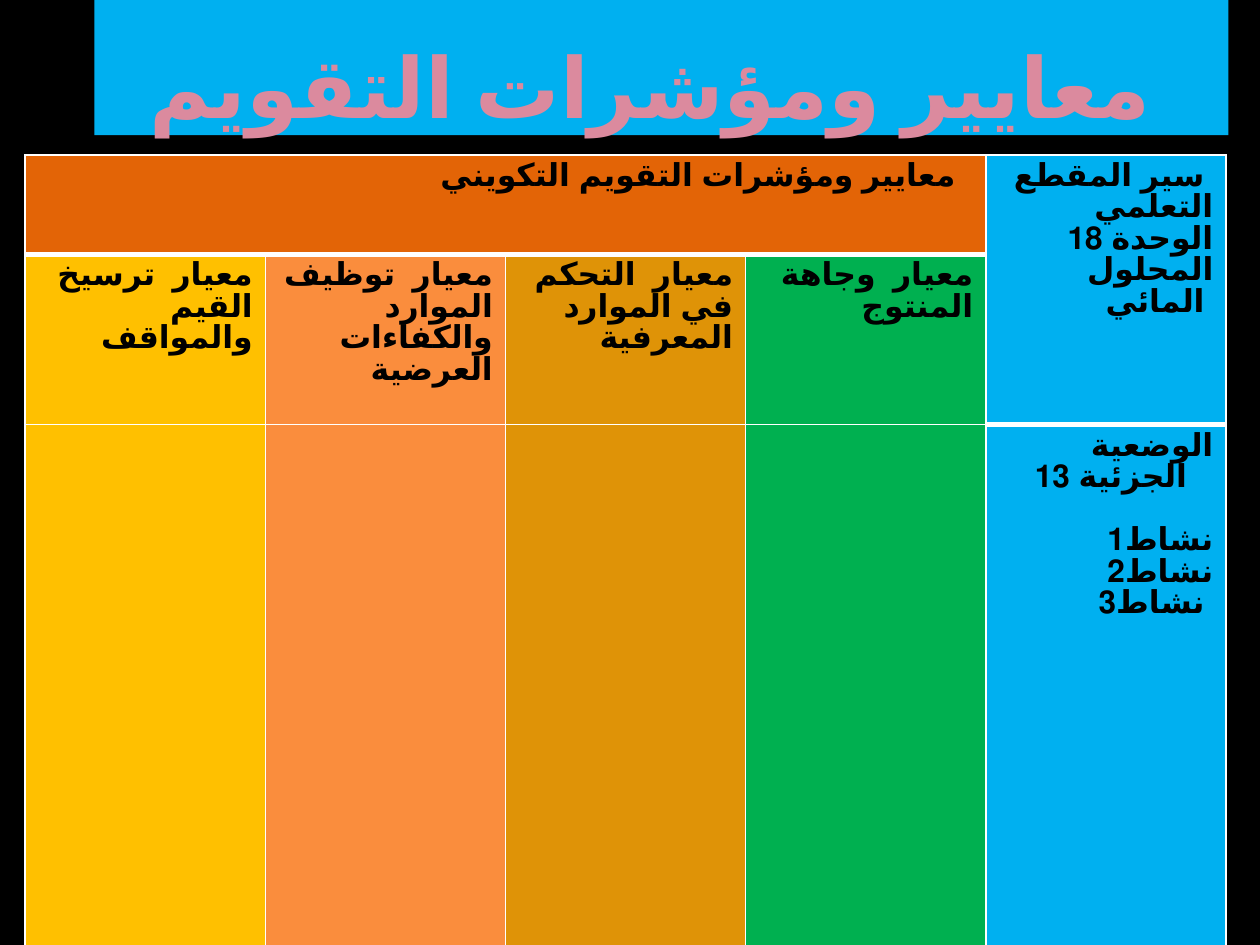
import pptx
import pptx.dml.color
import pptx.enum.shapes
import pptx.enum.text
import pptx.oxml
import pptx.oxml.ns
import pptx.util

COLOURS = {
    "black": "000000", "white": "FFFFFF", "sky": "00B0F0", "rose": "DB8A9E",
    "rust": "E36406", "yellow": "FFC000", "orange": "FA8D3D",
    "ochre": "DF9307", "green": "00B050",
}
ALIGN = pptx.enum.text.PP_ALIGN
ANCHOR = pptx.enum.text.MSO_ANCHOR
COLUMN_FILLS = ["yellow", "orange", "ochre", "green", "sky"]
CRITERIA = [
    "معيار\u00a0 ترسيخ القيم والمواقف",
    "معيار\u00a0 توظيف الموارد والكفاءات العرضية",
    "معيار\u00a0 التحكم في الموارد المعرفية",
    "معيار\u00a0 وجاهة المنتوج",
]
SEQUENCE = ["سير المقطع ", "التعلمي", "الوحدة 18", " المحلول المائي "]
SITUATION = ["الوضعية الجزئية 13   "]
ACTIVITIES = ["نشاط1", "نشاط2", "نشاط3 "]


def rgb(name):
    return pptx.dml.color.RGBColor.from_string(COLOURS[name])


def write(frame, lines, size=18, font="TeX Gyre Pagella", arabic_font=None,
          colour="black", align=ALIGN.RIGHT, pitch=18, gap_before=None):
    """Fill a text frame with Arabic paragraphs.

    gap_before is the index of the paragraph preceded by one line of space.
    """
    for index, line in enumerate(lines):
        para = frame.add_paragraph() if index else frame.paragraphs[0]
        para.alignment = align
        if pitch:
            para.line_spacing = pptx.util.Pt(pitch)
        if index == gap_before:
            para.space_before = pptx.util.Pt(pitch)
        span = para.add_run()
        span.text = line
        span.font.size = pptx.util.Pt(size)
        span.font.name = font
        span.font.bold = True
        span.font.color.rgb = rgb(colour)
        properties = span._r.get_or_add_rPr()
        properties.set("lang", "ar-DZ")
        if arabic_font:
            properties.append(pptx.oxml.parse_xml(
                f'<a:cs {pptx.oxml.ns.nsdecls("a")} typeface="{arabic_font}"/>'))


class Slide:
    def __init__(self, deck, background):
        self.deck = deck
        self.page = deck.slides.add_slide(deck.slide_layouts[6])
        self.page.background.fill.solid()
        self.page.background.fill.fore_color.rgb = rgb(background)

    def area(self, left, top, width, height):
        """Turn shares of the slide's size into lengths."""
        across, down = self.deck.slide_width, self.deck.slide_height
        return [int(share * full) for share, full in
                zip((left, top, width, height), (across, down, across, down))]

    def banner(self, text, area, fill, **style):
        box = self.page.shapes.add_shape(
            pptx.enum.shapes.MSO_SHAPE.RECTANGLE, *self.area(*area))
        box.shadow.inherit = False
        box.fill.solid()
        box.fill.fore_color.rgb = rgb(fill)
        box.line.fill.background()
        frame = box.text_frame
        frame.word_wrap = True
        frame.vertical_anchor = ANCHOR.BOTTOM
        frame.margin_left = frame.margin_right = pptx.util.Inches(0.05)
        frame.margin_top = frame.margin_bottom = 0
        write(frame, [text], **style)

    def grid(self, area, row_heights, columns):
        place = self.area(*area)
        table = self.page.shapes.add_table(len(row_heights), columns, *place).table
        table.first_row = table.horz_banding = False
        for row, height in zip(table.rows, row_heights):
            row.height = pptx.util.Inches(height)
        return table

    def cell(self, table, row, column, fill, lines=(), bottom=1, **style):
        cell = table.cell(row, column)
        cell.fill.solid()
        cell.fill.fore_color.rgb = rgb(fill)
        self.borders(cell, bottom)
        write(cell.text_frame, lines, **style)

    def borders(self, cell, bottom):
        properties = cell._tc.get_or_add_tcPr()
        sides = {"lnL": 1, "lnR": 1, "lnT": 1, "lnB": bottom}
        for index, (side, points) in enumerate(sides.items()):
            properties.insert(index, pptx.oxml.parse_xml(
                f'<a:{side} {pptx.oxml.ns.nsdecls("a")} w="{pptx.util.Pt(points)}">'
                f'<a:solidFill><a:srgbClr val="{COLOURS["white"]}"/></a:solidFill>'
                f'</a:{side}>'))


def main():
    deck = pptx.Presentation()
    deck.slide_width = pptx.util.Inches(10)
    deck.slide_height = pptx.util.Inches(7.5)
    slide = Slide(deck, "black")
    slide.banner("معايير ومؤشرات التقويم ", (0.075, 0, 0.9, 0.143), "sky",
                 size=48, font="Open Sans", arabic_font="Open Sans",
                 colour="rose", align=ALIGN.CENTER, pitch=None)

    table = slide.grid((0.02, 0.164, 0.953, 0.81), [0.79, 1.12, 4.16], 5)
    for column, fill in enumerate(COLUMN_FILLS[:-1]):
        slide.cell(table, 0, column, "rust", bottom=3)
        slide.cell(table, 1, column, fill, [CRITERIA[column]])
        slide.cell(table, 2, column, fill)
    write(table.cell(0, 0).text_frame, ["معايير ومؤشرات التقويم التكويني\u00a0 "])
    slide.cell(table, 0, 4, "sky", SEQUENCE, bottom=3)
    slide.cell(table, 1, 4, "sky", bottom=3)
    slide.cell(table, 2, 4, "sky", SITUATION + ACTIVITIES, gap_before=1)
    table.cell(0, 0).merge(table.cell(0, 3))
    table.cell(0, 4).merge(table.cell(1, 4))
    deck.save("out.pptx")


if __name__ == "__main__":
    main()
